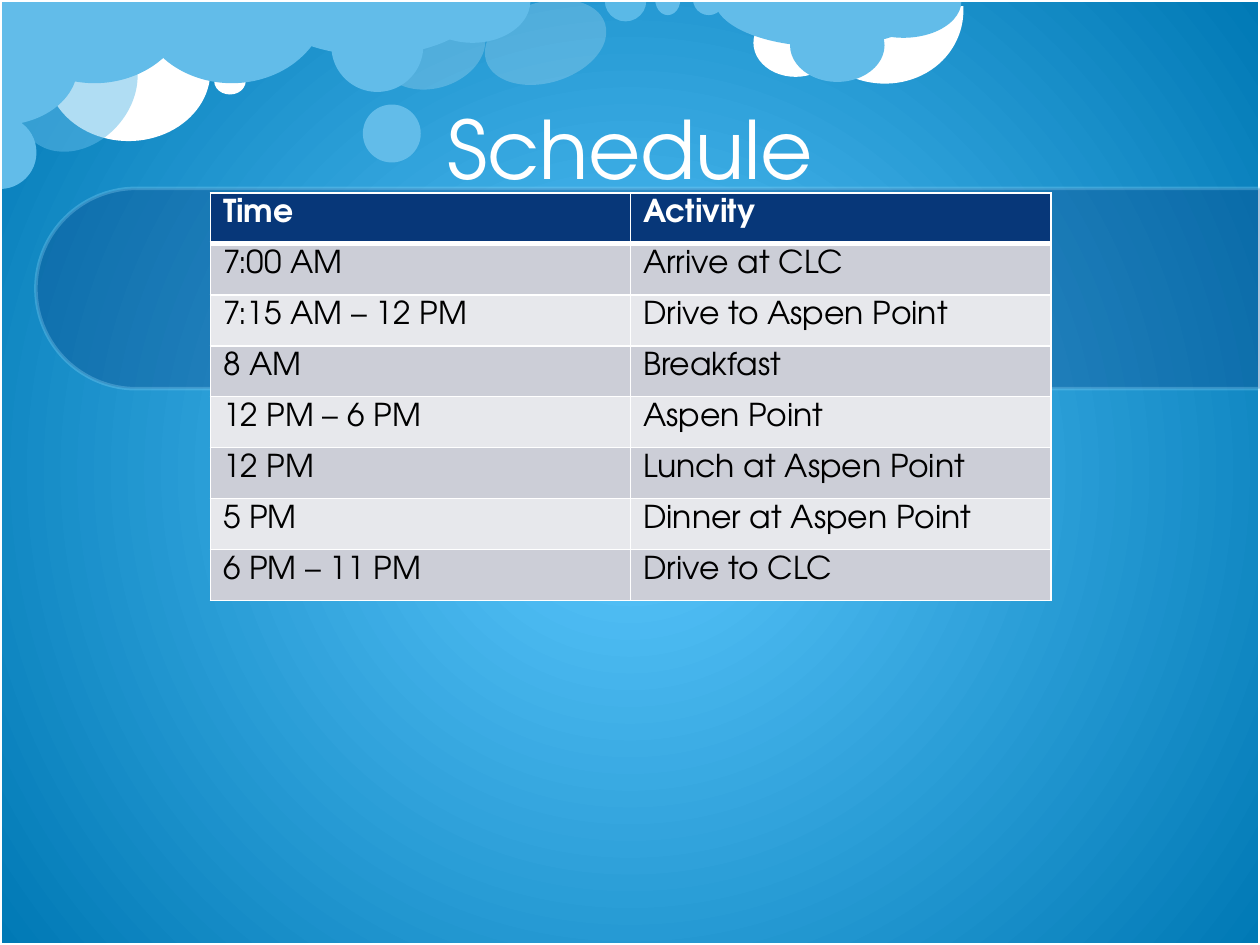
from dataclasses import dataclass

from lxml import etree
from pptx import Presentation
from pptx.dml.color import RGBColor
from pptx.enum.shapes import MSO_SHAPE
from pptx.enum.text import MSO_ANCHOR, PP_ALIGN
from pptx.oxml.ns import qn
from pptx.util import Inches, Pt

ELLIPSE = MSO_SHAPE.OVAL
PIE = MSO_SHAPE.PIE
ARC = MSO_SHAPE.ARC
RECTANGLE = MSO_SHAPE.RECTANGLE
ROUND_TOP = MSO_SHAPE.ROUND_2_SAME_RECTANGLE
CENTER = PP_ALIGN.CENTER
MIDDLE = MSO_ANCHOR.MIDDLE
HALF_TURN = (0, 108)


@dataclass(frozen=True)
class Theme:
    font: str = "TeX Gyre Adventor"
    white: str = "FFFFFF"
    black: str = "000000"
    glow: str = "5DC9FF"
    deep: str = "0079B5"
    cloud: str = "62BCE9"
    pale: str = "8FD9FB"
    navy: str = "073779"
    bands: tuple = ("CCCED7", "E7E8EC")
    title_size: int = 46
    title_leading: int = 56
    table_size: int = 18


THEME = Theme()

CLOUDS = [
    (ELLIPSE, (3.11, -0.05, 0.64, 0.86), THEME.white, 20, 72.8, ()),
    (ELLIPSE, (0.37, 0.01, 1.3, 1.11), THEME.white, 100, 0, ()),
    (ARC, (6.39, -0.6, 1.21, 1.31), THEME.white, 100, 106.5, (151.8, 44.48)),
    (ELLIPSE, (5.98, 0.07, 0.67, 0.54), THEME.white, 100, 0, ()),
    (PIE, (-0.01, -0.66, 1.52, 1.32), THEME.cloud, 100, 0, HALF_TURN),
    (PIE, (2.08, -0.44, 1.75, 0.88), THEME.cloud, 100, 0, HALF_TURN),
    (ELLIPSE, (2.88, 0.83, 0.46, 0.46), THEME.cloud, 100, 0, ()),
    (ELLIPSE, (0.19, 0.18, 0.85, 1.07), THEME.cloud, 50, 41.8, ()),
    (PIE, (-0.29, 0.92, 0.58, 0.58), THEME.cloud, 100, 270, HALF_TURN),
    (ELLIPSE, (1.7, 0.54, 0.25, 0.21), THEME.white, 100, 0, ()),
    (PIE, (1.08, -0.66, 1.52, 1.32), THEME.cloud, 100, 0, HALF_TURN),
    (PIE, (5.67, -0.38, 1.75, 0.75), THEME.cloud, 100, 0, HALF_TURN),
    (ELLIPSE, (6.27, 0.07, 0.75, 0.58), THEME.cloud, 100, 0, ()),
    (PIE, (6.71, -0.28, 0.92, 0.58), THEME.cloud, 100, 0, HALF_TURN),
    (ELLIPSE, (4.01, -0.16, 0.64, 0.99), THEME.white, 20, 72.8, ()),
    (PIE, (4.8, -0.16, 0.33, 0.33), THEME.pale, 50, 0, HALF_TURN),
    (PIE, (5.2, -0.13, 0.2, 0.25), THEME.cloud, 100, 0, HALF_TURN),
    (PIE, (5.5, -0.13, 0.25, 0.25), THEME.cloud, 100, 0, HALF_TURN),
    (ELLIPSE, (2.63, 0, 0.73, 0.73), THEME.cloud, 100, 0, ()),
    (PIE, (3.29, -0.33, 0.92, 0.67), THEME.cloud, 100, 0, HALF_TURN),
    (PIE, (-0.47, -0.09, 0.93, 1.24), THEME.cloud, 100, 270, HALF_TURN),
]

SCHEDULE = [
    ("Time", "Activity"),
    ("7:00 AM", "Arrive at CLC"),
    ("7:15 AM – 12 PM", "Drive to Aspen Point"),
    ("8 AM", "Breakfast"),
    ("12 PM – 6 PM", "Aspen Point"),
    ("12 PM", "Lunch at Aspen Point"),
    ("5 PM", "Dinner at Aspen Point"),
    ("6 PM – 11 PM", "Drive to CLC"),
]


class SlideBuilder:
    def __init__(self, page, theme):
        self.page = page
        self.theme = theme

    def paint(self, fill, color, opacity=100):
        fill.solid()
        fill.fore_color.rgb = RGBColor.from_string(color)
        if opacity < 100:
            self.fade(fill.fore_color, opacity)

    def fade(self, color, opacity):
        node = color._xFill.find(qn("a:srgbClr"))
        etree.SubElement(node, qn("a:alpha"), val=str(opacity * 1000))

    def background(self):
        fill = self.page.background.fill
        fill.gradient()
        colors = (self.theme.glow, self.theme.deep)
        for position, (stop, color) in enumerate(zip(fill.gradient_stops, colors)):
            stop.position = position
            stop.color.rgb = RGBColor.from_string(color)
        gradient = self.page.background._cSld.find(".//" + qn("a:gradFill"))
        linear = gradient.find(qn("a:lin"))
        radial = etree.Element(qn("a:path"), path="circle")
        etree.SubElement(radial, qn("a:fillToRect"),
                         {side: "50000" for side in "ltrb"})
        gradient.replace(linear, radial)

    def shape(self, kind, frame, color=None, opacity=100, rotation=0,
              adjustments=(), line=None, line_opacity=100):
        shape = self.page.shapes.add_shape(kind, *map(Inches, frame))
        shape.shadow.inherit = False
        shape.rotation = rotation
        for index, value in enumerate(adjustments):
            shape.adjustments[index] = value
        if color:
            self.paint(shape.fill, color, opacity)
        else:
            shape.fill.background()
        if line:
            self.paint(shape.line.fill, line, line_opacity)
            shape.line.width = Pt(2)
        else:
            shape.line.fill.background()

    def style(self, para, size, color, bold=False):
        for span in para.runs:
            span.font.name = self.theme.font
            span.font.size = Pt(size)
            span.font.bold = bold
            span.font.color.rgb = RGBColor.from_string(color)

    def title(self, text, frame):
        box = self.page.shapes.add_textbox(*map(Inches, frame))
        box.text_frame.word_wrap = True
        box.text_frame.vertical_anchor = MIDDLE
        box.text_frame.text = text
        para = box.text_frame.paragraphs[0]
        para.alignment = CENTER
        para.line_spacing = Pt(self.theme.title_leading)
        self.style(para, self.theme.title_size, self.theme.white)

    def border(self, cell, side, width):
        line = etree.SubElement(cell._tc.get_or_add_tcPr(), qn("a:ln" + side),
                                w=str(Pt(width)))
        fill = etree.SubElement(line, qn("a:solidFill"))
        etree.SubElement(fill, qn("a:srgbClr"), val=self.theme.white)

    def table(self, rows, frame):
        left, top, width, height = map(Inches, frame)
        table = self.page.shapes.add_table(
            len(rows), len(rows[0]), left, top, width, height).table
        for row_index, row in enumerate(rows):
            header = row_index == 0
            band = self.theme.bands[(row_index - 1) % 2]
            widths = {"L": 1, "R": 1, "T": 3 if row_index == 1 else 1,
                      "B": 3 if header else 1}
            for column_index, text in enumerate(row):
                cell = table.cell(row_index, column_index)
                cell.text_frame.text = text
                for side, line_width in widths.items():
                    self.border(cell, side, line_width)
                self.paint(cell.fill, self.theme.navy if header else band)
                self.style(cell.text_frame.paragraphs[0], self.theme.table_size,
                           self.theme.white if header else self.theme.black, header)


def main():
    deck = Presentation()
    deck.slide_width, deck.slide_height = Inches(10), Inches(7.5)
    page = deck.slides.add_slide(deck.slide_layouts[6])
    builder = SlideBuilder(page, THEME)
    builder.background()
    for cloud in CLOUDS:
        builder.shape(*cloud)
    builder.shape(RECTANGLE, (0, 0, 10, 7.5), line=THEME.white)
    builder.shape(ROUND_TOP, (4.35, -2.57, 1.59, 9.72), THEME.navy, 30, 270,
                  (0.5, 0), THEME.pale, 30)
    builder.title("Schedule", (0.78, 0.2, 8.44, 1.92))
    builder.table(SCHEDULE, (1.67, 1.53, 6.67, 3.24))
    deck.save("out.pptx")


if __name__ == "__main__":
    main()
